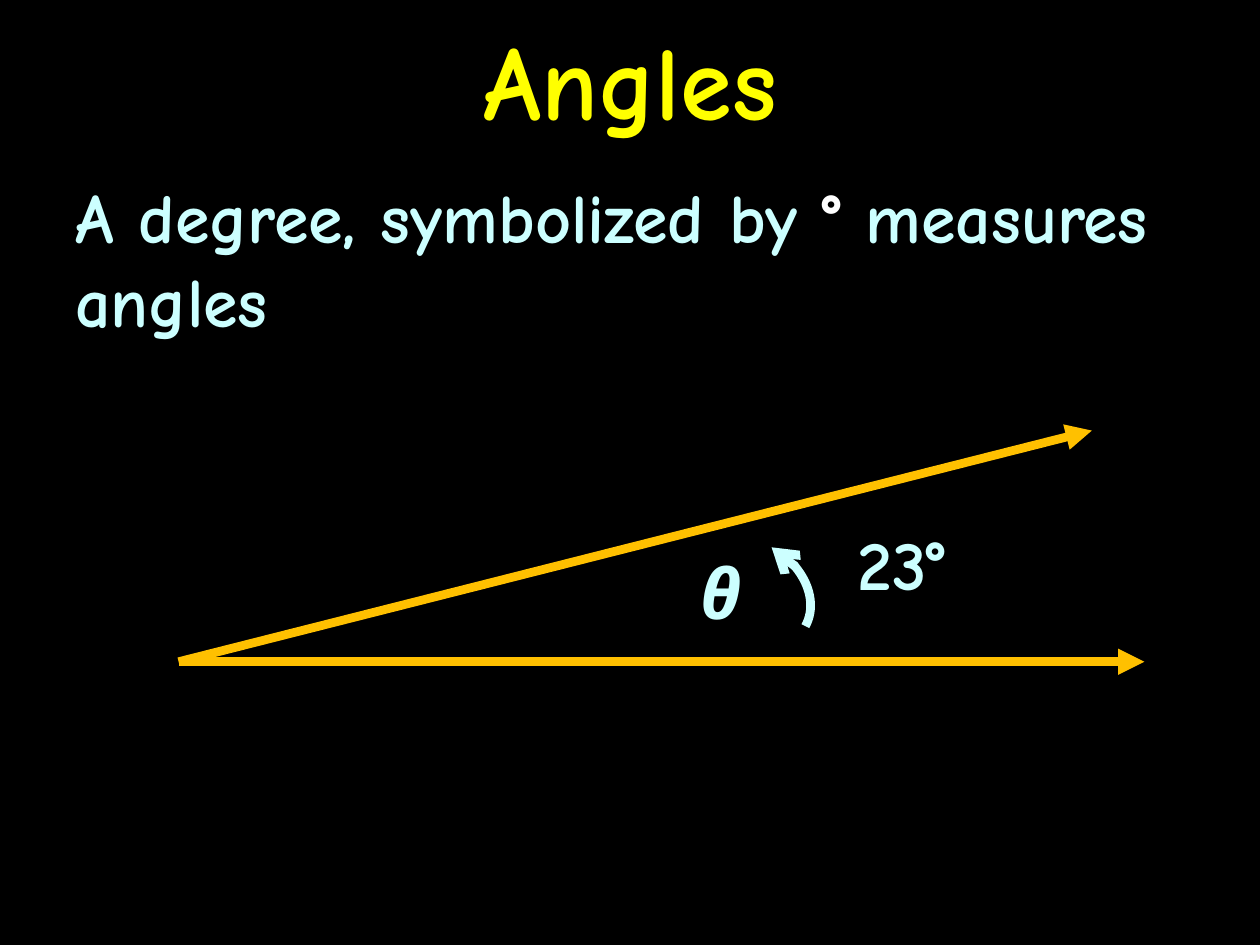
from lxml.etree import SubElement
from pptx import Presentation
from pptx.dml.color import RGBColor
from pptx.enum.shapes import MSO_CONNECTOR, MSO_SHAPE
from pptx.enum.text import MSO_ANCHOR, MSO_AUTO_SIZE, PP_ALIGN
from pptx.oxml.ns import qn
from pptx.util import Cm, Pt

COLORS = {
    "background": "000000",
    "title": "FFFF00",
    "text": "CCFFFF",
    "degree": "FFFFFF",
    "ray": "FFC000",
}


def set_font(font, size, color):
    font.name = "Comic Neue"
    font.size = Pt(size)
    font.bold = True
    font.color.rgb = RGBColor.from_string(COLORS[color])


def draw_stroke(line, color, end, arrowhead):
    """Give a line its colour and width, with an arrowhead at headEnd or tailEnd."""
    line.color.rgb = RGBColor.from_string(COLORS[color])
    line.width = Pt(5)
    SubElement(line._get_or_add_ln(), qn(f"a:{end}"), type=arrowhead)


prs = Presentation()
prs.slide_width, prs.slide_height = Cm(25.4), Cm(19.05)
slide = prs.slides.add_slide(prs.slide_layouts[5])
slide.background.fill.solid()
slide.background.fill.fore_color.rgb = RGBColor.from_string(COLORS["background"])

# Title
title = slide.shapes.title
title.left, title.top, title.width, title.height = Cm(0), Cm(0), Cm(25.4), Cm(3.18)
title.text_frame.text = "Angles"
title.text_frame.vertical_anchor = MSO_ANCHOR.MIDDLE
heading = title.text_frame.paragraphs[0]
heading.alignment = PP_ALIGN.CENTER
set_font(heading.font, 60, "title")

# Definition
definition = slide.shapes.add_textbox(Cm(1.27), Cm(3.38), Cm(22.86), Cm(15.67))
definition.text_frame.word_wrap = True
sentence = definition.text_frame.paragraphs[0]
sentence.space_before = Pt(8)
for words, color in [
    ("A degree, symbolized by ", "text"),
    ("° ", "degree"),
    ("measures angles", "text"),
]:
    run = sentence.add_run()
    run.text = words
    set_font(run.font, 40, color)

# Two rays from one vertex
vertex = Cm(3.6), Cm(13.34)
for tip in [(Cm(23.07), Cm(13.34)), (Cm(22.01), Cm(8.68))]:
    ray = slide.shapes.add_connector(MSO_CONNECTOR.STRAIGHT, *vertex, *tip)
    draw_stroke(ray.line, "ray", "tailEnd", "triangle")
    SubElement(ray._element.spPr, qn("a:effectLst"))

# Turn from the lower ray to the upper one
turn = slide.shapes.add_shape(MSO_SHAPE.ARC, Cm(13.67), Cm(10.9), Cm(2.74), Cm(2.11))
turn.rotation = 29.2
turn.shadow.inherit = False
turn.fill.background()
draw_stroke(turn.line, "text", "headEnd", "arrow")

# Angle labels
for label, left, top, width, italic in [
    ("23°", 17.04, 10.36, 2.82, False),
    ("θ", 13.87, 10.95, 1.37, True),
]:
    box = slide.shapes.add_textbox(Cm(left), Cm(top), Cm(width), Cm(1.96))
    box.text_frame.word_wrap = False
    box.text_frame.auto_size = MSO_AUTO_SIZE.SHAPE_TO_FIT_TEXT
    box.text_frame.text = label
    label_font = box.text_frame.paragraphs[0].font
    set_font(label_font, 40, "text")
    label_font.italic = italic

prs.save("out.pptx")
